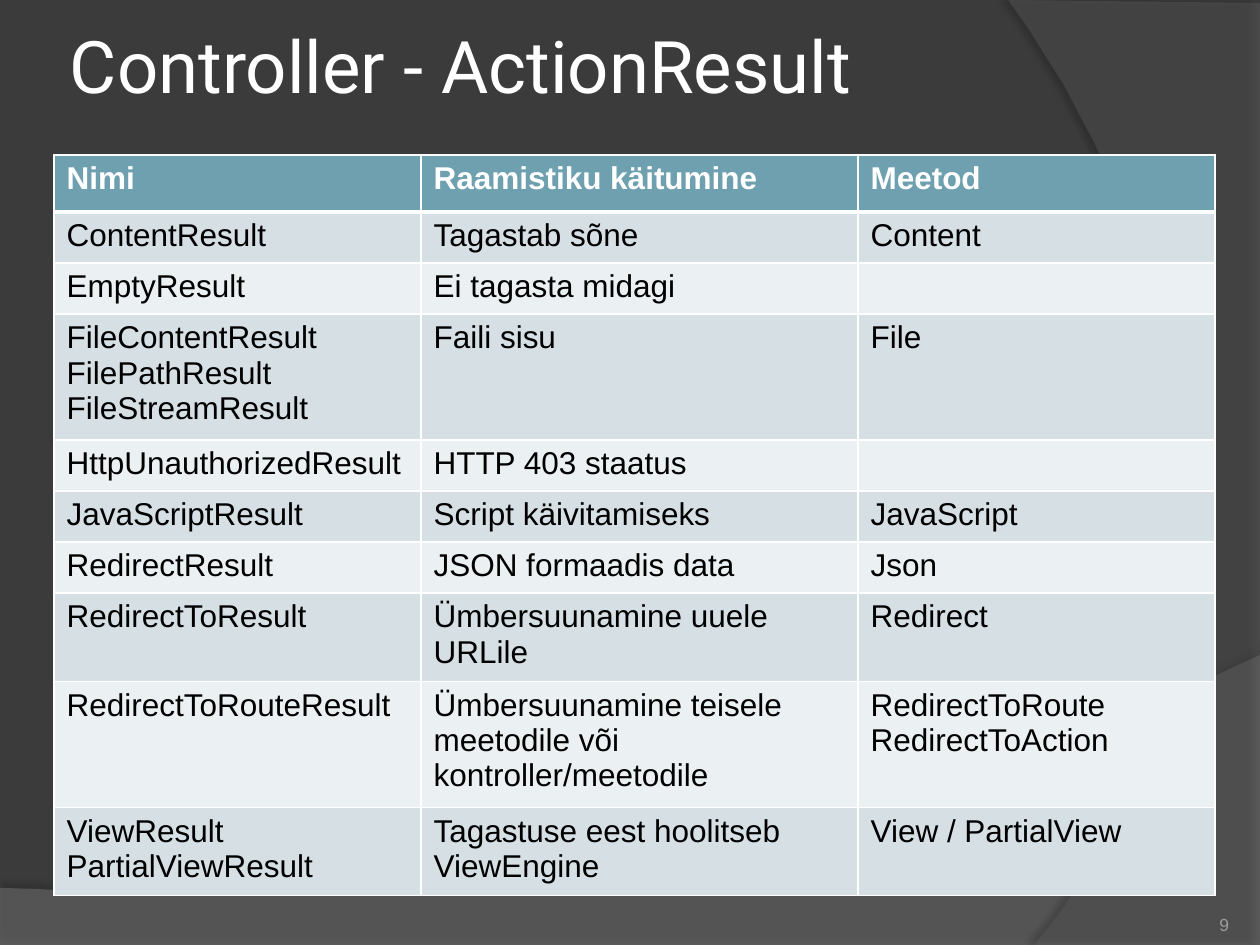
from lxml.etree import SubElement
from pptx import Presentation
from pptx.dml.color import RGBColor
from pptx.enum.text import MSO_ANCHOR, PP_ALIGN
from pptx.oxml import parse_xml
from pptx.oxml.ns import nsdecls, qn
from pptx.util import Emu, Pt

EMU_PER_PX = 914400 / 126
COLORS = {
    "background": "3B3B3B", "wave": "7F7F7F", "arc": "5E5E5E",
    "white": "FFFFFF", "black": "000000", "number": "9D9B9A",
    "header": "6EA0B0", "odd": "D5DFE4", "even": "EBF0F2",
}
HEADER = ["Nimi", "Raamistiku käitumine", "Meetod"]
RESULTS = [
    ["ContentResult", "Tagastab sõne", "Content"],
    ["EmptyResult", "Ei tagasta midagi", ""],
    ["FileContentResult FilePathResult FileStreamResult", "Faili sisu", "File"],
    ["HttpUnauthorizedResult", "HTTP 403 staatus", ""],
    ["JavaScriptResult", "Script käivitamiseks", "JavaScript"],
    ["RedirectResult", "JSON formaadis data", "Json"],
    ["RedirectToResult", "Ümbersuunamine uuele URLile", "Redirect"],
    ["RedirectToRouteResult",
     "Ümbersuunamine teisele meetodile või kontroller/meetodile",
     "RedirectToRoute\nRedirectToAction"],
    ["ViewResult\nPartialViewResult", "Tagastuse eest hoolitseb ViewEngine",
     "View / PartialView"],
]


def px(length):
    return Emu(round(length * EMU_PER_PX))


def color(name):
    return RGBColor.from_string(COLORS[name])


def curve(start, first, second, end, steps=40):
    """Points along a cubic Bezier curve."""
    points = []
    for step in range(steps + 1):
        t = step / steps
        weights = ((1 - t) ** 3, 3 * t * (1 - t) ** 2, 3 * t * t * (1 - t), t ** 3)
        points.append(tuple(
            sum(weight * value for weight, value in zip(weights, axis))
            for axis in zip(start, first, second, end)))
    return points


def write(frame, text, size=18, font="Arial", ink="black", bold=False,
          align=PP_ALIGN.LEFT):
    """Fill a text frame, one paragraph per line of text."""
    for index, line in enumerate(text.split("\n")):
        para = frame.add_paragraph() if index else frame.paragraphs[0]
        para.alignment = align
        span = para.add_run()
        span.text = line
        span.font.size = Pt(size)
        span.font.name = font
        span.font.bold = bold
        span.font.color.rgb = color(ink)


class SlideBuilder:
    def __init__(self, deck):
        self.page = deck.slides.add_slide(deck.slide_layouts[6])
        fill = self.page.background.fill
        fill.solid()
        fill.fore_color.rgb = color("background")

    def swoosh(self, points, paint, opacity, shadow_opacity, distance, direction):
        """Add a translucent outline with a soft shadow."""
        builder = self.page.shapes.build_freeform(*points[0], scale=EMU_PER_PX)
        builder.add_line_segments(points[1:], close=True)
        shape = builder.convert_to_shape()
        shape.line.fill.background()
        shape.fill.solid()
        shape.fill.fore_color.rgb = color(paint)
        properties = shape._element.spPr
        SubElement(properties.find(".//" + qn("a:srgbClr")), qn("a:alpha"),
                   val=str(opacity * 1000))
        properties.append(parse_xml(
            f'<a:effectLst {nsdecls("a")}><a:outerShdw blurRad="{Pt(4)}" '
            f'dist="{Pt(distance)}" dir="{direction * 60000}" algn="ctr" '
            f'rotWithShape="0"><a:srgbClr val="{COLORS["black"]}">'
            f'<a:alpha val="{shadow_opacity * 1000}"/></a:srgbClr>'
            '</a:outerShdw></a:effectLst>'))

    def text(self, text, left, top, width, height, anchor, margin=0, **style):
        box = self.page.shapes.add_textbox(px(left), px(top), px(width), px(height))
        frame = box.text_frame
        frame.word_wrap = True
        frame.vertical_anchor = anchor
        frame.margin_left = frame.margin_right = px(margin)
        frame.margin_top = frame.margin_bottom = px(margin)
        write(frame, text, **style)

    def borders(self, cell, top=1, bottom=1):
        widths = {"lnL": 1, "lnR": 1, "lnT": top, "lnB": bottom}
        for index, (side, width) in enumerate(widths.items()):
            cell._tc.get_or_add_tcPr().insert(index, parse_xml(
                f'<a:{side} {nsdecls("a")} w="{Pt(width)}"><a:solidFill>'
                f'<a:srgbClr val="{COLORS["white"]}"/></a:solidFill></a:{side}>'))

    def table(self, rows, left, top, widths, header_height, row_height):
        heights = [header_height] + [row_height] * (len(rows) - 1)
        table = self.page.shapes.add_table(
            len(rows), len(widths), px(left), px(top),
            px(sum(widths)), px(sum(heights))).table
        for column, width in zip(table.columns, widths):
            column.width = px(width)
        for r, (values, height) in enumerate(zip(rows, heights)):
            table.rows[r].height = px(height)
            paint = "header" if r == 0 else "odd" if r % 2 else "even"
            for c, value in enumerate(values):
                cell = table.cell(r, c)
                cell.fill.solid()
                cell.fill.fore_color.rgb = color(paint)
                self.borders(cell, top=3 if r == 1 else 1, bottom=3 if r == 0 else 1)
                write(cell.text_frame, value, bold=r == 0,
                      ink="white" if r == 0 else "black")


def main():
    deck = Presentation()
    deck.slide_width, deck.slide_height = px(1260), px(945)
    slide = SlideBuilder(deck)
    wave = curve((1260, 655), (704, 919), (493, 906), (0, 888))
    slide.swoosh([(0, 946), (1260, 946)] + wave, "wave", 45, 35, 3.5, 270)
    arc = curve((1034, 945), (1178, 780), (1283, 378), (1008, 0))
    slide.swoosh([(1260, 3), (1260, 945)] + arc, "arc", 40, 45, 4, 180)
    slide.text("Controller - ActionResult", 64, 16, 1030, 97, MSO_ANCHOR.MIDDLE,
               margin=6, size=41.4, font="Roboto", ink="white")
    slide.table([HEADER] + RESULTS, 54, 155, [367, 437, 357], 57, 51)
    slide.text("9", 1124, 885, 105, 50, MSO_ANCHOR.BOTTOM,
               size=10, ink="number", align=PP_ALIGN.RIGHT)
    deck.save("out.pptx")


if __name__ == "__main__":
    main()
